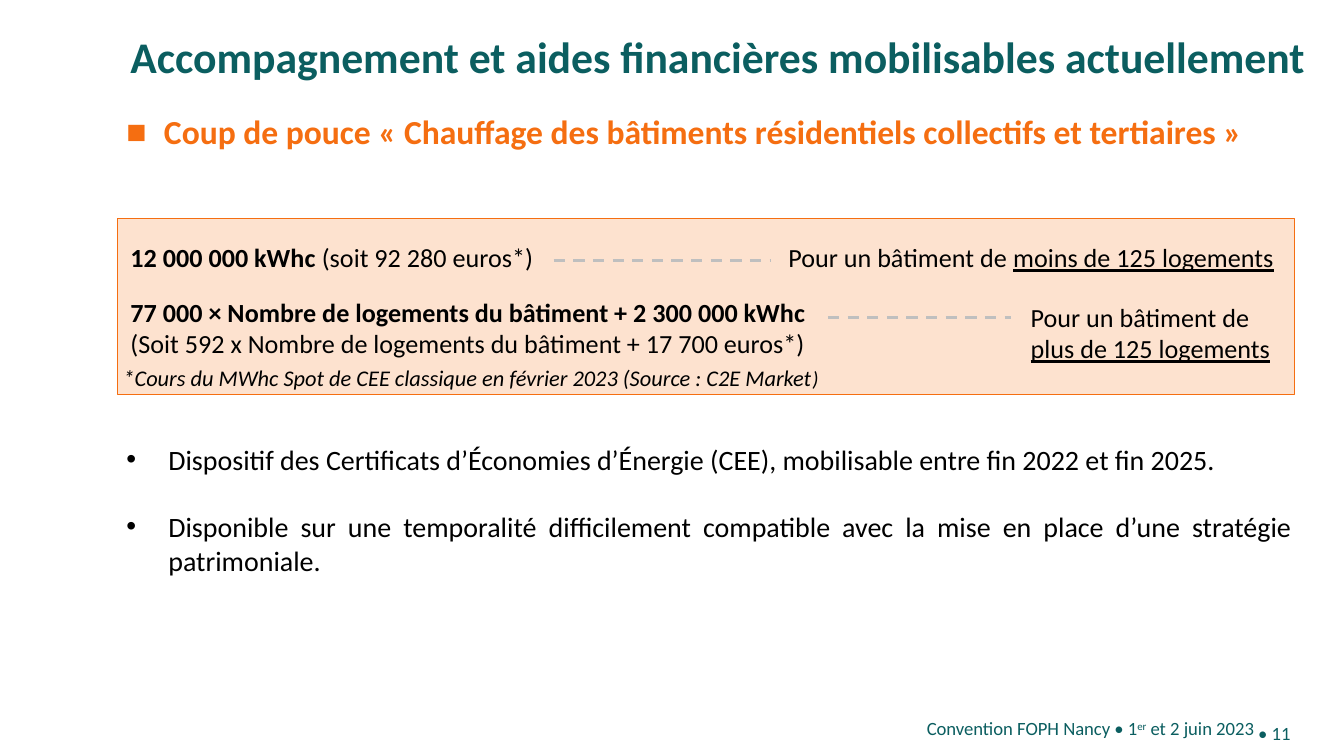
from dataclasses import dataclass
from typing import Optional

from lxml import etree
from pptx import Presentation
from pptx import util as u
from pptx.dml.color import RGBColor
from pptx.enum import dml, shapes, text
from pptx.oxml.ns import qn

CELL = u.Inches(0.1)
COLUMNS, ROWS = 100, 56.25
TEAL, ORANGE, PEACH = "0B5E60", "F56E11", "FDE2CF"
BLACK, GREY = "000000", "BFBFBF"
LEFT, RIGHT = text.PP_ALIGN.LEFT, text.PP_ALIGN.RIGHT
JUSTIFY = text.PP_ALIGN.JUSTIFY
TOP, MIDDLE = text.MSO_ANCHOR.TOP, text.MSO_ANCHOR.MIDDLE


@dataclass(frozen=True)
class Area:
    column: float
    row: float
    columns: float
    rows: float


@dataclass(frozen=True)
class Piece:
    words: str
    bold: Optional[bool] = None
    underline: Optional[bool] = None
    baseline: Optional[int] = None
    size: Optional[float] = None


@dataclass(frozen=True)
class Block:
    area: Area
    paragraphs: list[list[Piece]]
    size: float = 14
    color: str = BLACK
    bold: bool = False
    italic: bool = False
    align: text.PP_ALIGN = LEFT
    anchor: text.MSO_ANCHOR = TOP
    inset: tuple[float, float] = (1, 0.5)
    bullet: str = ""
    indent: float = 0
    tab: float = 0
    line_spacing: float = 1
    gap: float = 0


@dataclass(frozen=True)
class Dash:
    start: float
    end: float
    row: float


def cells(count: float) -> int:
    return round(count * CELL)


def color_of(code: str) -> RGBColor:
    return RGBColor.from_string(code)


def place(area: Area) -> tuple[int, ...]:
    return tuple(map(cells, (area.column, area.row, area.columns, area.rows)))


def add_bullet(paragraph, mark: str, indent: float) -> None:
    properties = paragraph._p.get_or_add_pPr()
    properties.set("marL", str(cells(indent)))
    properties.set("indent", str(-cells(indent)))
    etree.SubElement(properties, qn("a:buFont"), typeface="Arial")
    etree.SubElement(properties, qn("a:buChar"), char=mark)


def add_tab(paragraph, position: float) -> None:
    stops = etree.SubElement(paragraph._p.get_or_add_pPr(), qn("a:tabLst"))
    etree.SubElement(stops, qn("a:tab"), pos=str(cells(position)), algn="l")


def add_piece(paragraph, piece: Piece) -> None:
    run = paragraph.add_run()
    run.text = piece.words
    if piece.bold is not None:
        run.font.bold = piece.bold
    if piece.underline is not None:
        run.font.underline = piece.underline
    if piece.size is not None:
        run.font.size = u.Pt(piece.size)
    if piece.baseline is not None:
        run.font._element.set("baseline", str(piece.baseline))


def add_block(slide, block: Block) -> None:
    frame = slide.shapes.add_textbox(*place(block.area)).text_frame
    frame.word_wrap = True
    frame.vertical_anchor = block.anchor
    frame.margin_left = frame.margin_right = cells(block.inset[0])
    frame.margin_top = frame.margin_bottom = cells(block.inset[1])
    for index, pieces in enumerate(block.paragraphs):
        paragraph = frame.add_paragraph() if index else frame.paragraphs[0]
        paragraph.alignment = block.align
        paragraph.line_spacing = block.line_spacing
        if index and block.gap:
            paragraph.space_before = u.Pt(block.gap)
        if block.bullet:
            add_bullet(paragraph, block.bullet, block.indent)
        if block.tab:
            add_tab(paragraph, block.tab)
        font = paragraph.font
        font.name, font.size = "Calibri", u.Pt(block.size)
        font.bold, font.italic = block.bold, block.italic
        font.color.rgb = color_of(block.color)
        for piece in pieces:
            add_piece(paragraph, piece)


def add_panel(slide, area: Area) -> None:
    panel = slide.shapes.add_shape(shapes.MSO_SHAPE.RECTANGLE, *place(area))
    panel.shadow.inherit = False
    panel.fill.solid()
    panel.fill.fore_color.rgb = color_of(PEACH)
    panel.line.color.rgb = color_of(ORANGE)
    panel.line.width = u.Pt(0.5)


def add_dash(slide, dash: Dash) -> None:
    connector = slide.shapes.add_connector(
        shapes.MSO_CONNECTOR.STRAIGHT,
        *map(cells, (dash.start, dash.row, dash.end, dash.row)))
    connector.line.color.rgb = color_of(GREY)
    connector.line.width = u.Pt(1.5)
    connector.line.dash_style = dml.MSO_LINE.DASH
    etree.SubElement(connector._element.spPr, qn("a:effectLst"))


PANEL = Area(8.73, 16.23, 87.6, 13.1)
DASHES = [Dash(41.2, 57.4, 19.4), Dash(61.6, 75.2, 23.6)]
HEADINGS = [
    Block(Area(9.7, 2.8, 87.6, 3.9),
          [[Piece("Accompagnement et aides financières mobilisables actuellement")]],
          size=23.4, color=TEAL, bold=True, inset=(0, 0), line_spacing=0.85),
    Block(Area(9.4, 8.6, 87.5, 38.1),
          [[Piece("Coup de pouce «\u00a0Chauffage des bâtiments résidentiels collectifs et tertiaires\u00a0»")]],
          size=18, color=ORANGE, bold=True, align=JUSTIFY, inset=(0, 0),
          bullet="■", indent=2.8, line_spacing=0.9),
    Block(Area(34.3, 53.45, 59, 1.5),
          [[Piece("Convention FOPH Nancy • 1"), Piece("er", baseline=30000),
            Piece(" et 2 juin 2023")]],
          size=10, color=TEAL, align=RIGHT, anchor=MIDDLE, inset=(0, 0)),
    Block(Area(93.3, 53.8, 3.9, 1.5), [[Piece(" • 11")]],
          size=10, color=TEAL, anchor=MIDDLE, inset=(0, 0)),
]
DETAILS = [
    Block(Area(8.2, 26.63, 55.5, 3),
          [[Piece("*Cours du MWhc Spot de CEE classique en février 2023 (Source : C2E Market"),
            Piece(")", size=11)]], size=12, italic=True),
    Block(Area(8.73, 17.5, 87.6, 3.4),
          [[Piece("12 000 000 kWhc", bold=True),
            Piece("\u00a0(soit 92 280 euros*)\tPour un bâtiment de "),
            Piece("moins de 125 logements", underline=True)]], tab=48.95),
    Block(Area(8.73, 21.53, 53.3, 8.1),
          [[Piece("77 000 × Nombre de logements du bâtiment + 2 300 000 kWhc", bold=True)],
           [Piece("(Soit 592 x Nombre de logements du bâtiment + 17 700 euros*)")]],
          align=JUSTIFY),
    Block(Area(75.7, 21.9, 20.5, 5.7),
          [[Piece("Pour un bâtiment de "),
            Piece("plus de 125 logements", underline=True)]]),
]
REMARKS = Block(
    Area(8.43, 32.43, 88.7, 11.1),
    [[Piece("Dispositif des Certificats d’Économies d’Énergie (CEE), mobilisable entre fin 2022 et fin 2025.")],
     [Piece("Disponible sur une temporalité difficilement compatible avec la mise en place d’une stratégie patrimoniale.")]],
    size=15, align=JUSTIFY, bullet="•", indent=3.12, gap=18)


def main() -> None:
    presentation = Presentation()
    presentation.slide_width = cells(COLUMNS)
    presentation.slide_height = cells(ROWS)
    slide = presentation.slides.add_slide(presentation.slide_layouts[6])
    for heading in HEADINGS:
        add_block(slide, heading)
    add_panel(slide, PANEL)
    for detail in DETAILS:
        add_block(slide, detail)
    for dash in DASHES:
        add_dash(slide, dash)
    add_block(slide, REMARKS)
    presentation.save("out.pptx")


if __name__ == "__main__":
    main()
